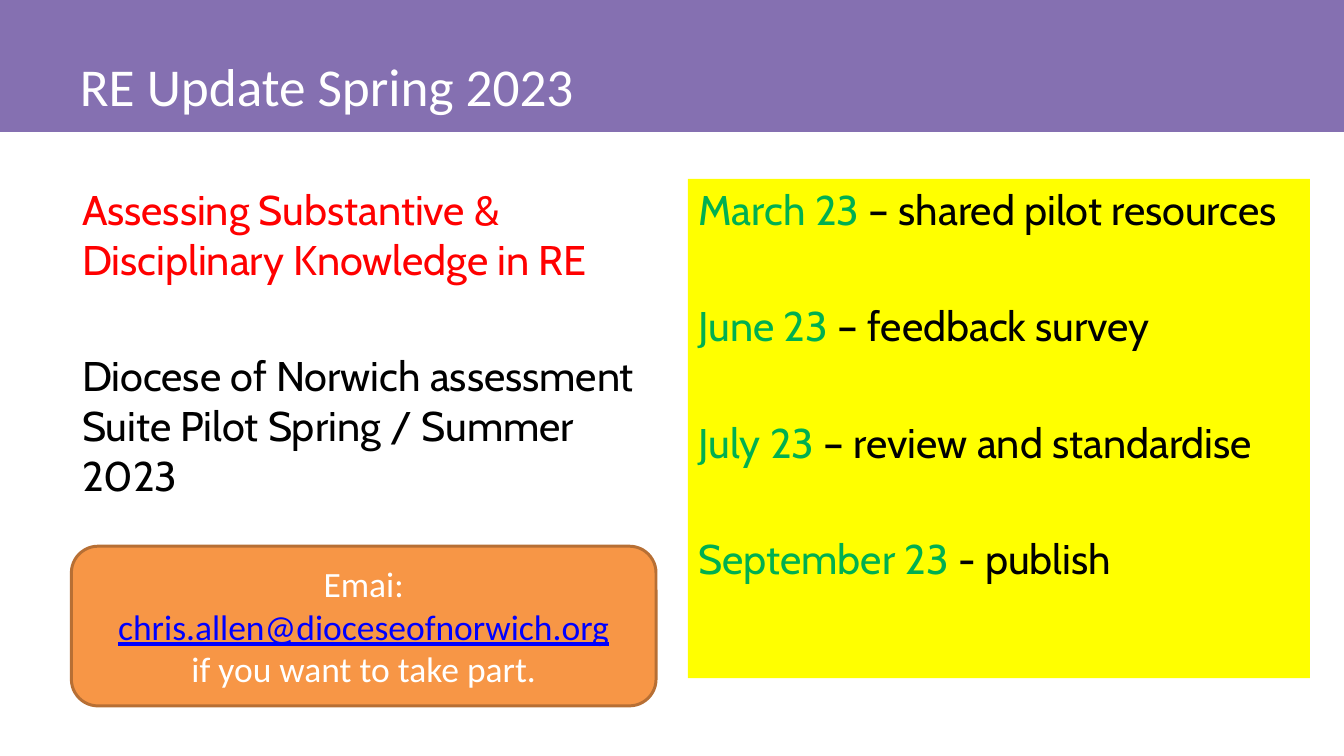
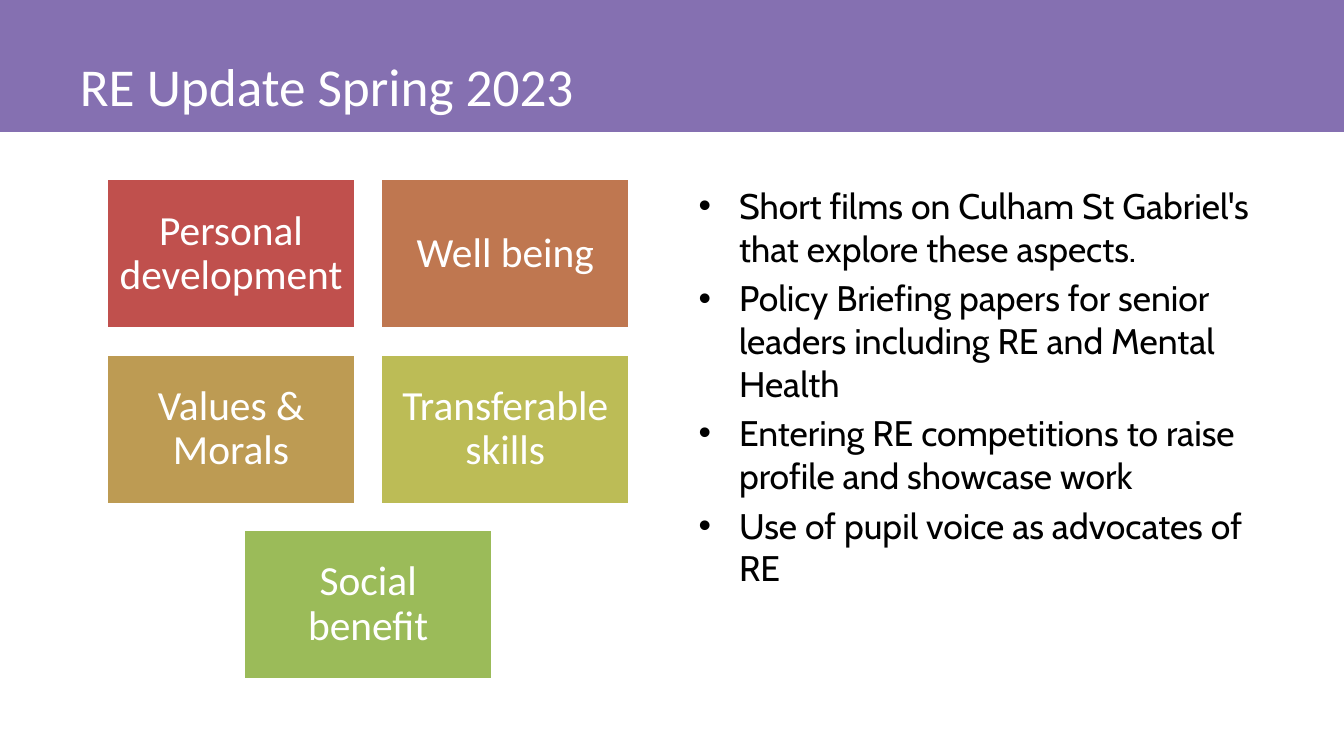
from dataclasses import dataclass

from lxml import etree
from pptx import Presentation
from pptx import util as u
from pptx.dml.color import RGBColor
from pptx.enum import shapes, text
from pptx.oxml import ns

PURPLE, ORANGE, ORANGE_EDGE, YELLOW = "8570B1", "F79646", "B76F34", "FFFF00"
WHITE, BLACK, RED, GREEN, BLUE = "FFFFFF", "000000", "FF0000", "00B050", "0000FF"
TITLE_FONT, BODY_FONT = "Calibri", "Cabin"
WIDTH, HEIGHT = 12.62, 7.1
CONTENT_TOP, CONTENT_HEIGHT = 1.68, 4.69
LEFT_COLUMN, RIGHT_COLUMN, COLUMN_WIDTH = 0.67, 6.46, 5.58
TILE_WIDTH, TILE_HEIGHT, TILE_GAP, TILE_LEFT, TILES_PER_ROW = 2.34, 1.41, 0.235, 1, 2


@dataclass(frozen=True)
class Box:
    left: float
    top: float
    width: float
    height: float


@dataclass(frozen=True)
class Words:
    text: str
    color: str
    underline: bool = False


@dataclass(frozen=True)
class Tile:
    label: str
    color: str


MILESTONES = [
    [Words("March 23 ", GREEN), Words("– shared pilot resources", BLACK)],
    [Words("June 23 ", GREEN), Words("– feedback survey", BLACK)],
    [Words("July 23 ", GREEN), Words("– review and standardise", BLACK)],
    [Words("September 23 ", GREEN), Words("- publish", BLACK)],
]
PILOT = [
    [Words("Assessing Substantive & Disciplinary Knowledge in RE", RED)],
    [Words("Diocese of Norwich assessment Suite Pilot Spring / Summer 2023", BLACK)],
]
CONTACT = [
    [Words("Emai: ", WHITE), Words("chris.allen@dioceseofnorwich.org", BLUE, True)],
    [Words("if you want to take part.", WHITE)],
]
ACTIONS = [
    [Words("Short films on Culham St Gabriel's that explore these aspects.", BLACK)],
    [Words("Policy Briefing papers for senior leaders including RE and Mental Health", BLACK)],
    [Words("Entering RE competitions to raise profile and showcase work", BLACK)],
    [Words("Use of pupil voice as advocates of RE", BLACK)],
]
TILES = [
    Tile("Personal development", "C0504D"),
    Tile("Well being", "BF7750"),
    Tile("Values & Morals", "BD9B53"),
    Tile("Transferable skills", "BCBC56"),
    Tile("Social benefit", "9BBB59"),
]


def rgb(color: str) -> RGBColor:
    return RGBColor.from_string(color)


def place(shape, box: Box) -> None:
    shape.left, shape.top = u.Inches(box.left), u.Inches(box.top)
    shape.width, shape.height = u.Inches(box.width), u.Inches(box.height)


def fill_shape(shape, color: str) -> None:
    shape.fill.solid()
    shape.fill.fore_color.rgb = rgb(color)


def add_box(slide, kind, box: Box, fill: str, line: str | None = None):
    shape = slide.shapes.add_shape(kind, 0, 0, 0, 0)
    place(shape, box)
    shape.shadow.inherit = False
    fill_shape(shape, fill)
    if line:
        shape.line.color.rgb = rgb(line)
        shape.line.width = u.Pt(2)
    else:
        shape.line.fill.background()
    return shape


def set_bullet(paragraph, bulleted: bool) -> None:
    properties = paragraph._p.get_or_add_pPr()
    indent = u.Inches(0.38) if bulleted else 0
    properties.set("marL", str(indent))
    properties.set("indent", str(-indent))
    bullet = etree.SubElement(properties, ns.qn("a:buChar" if bulleted else "a:buNone"))
    if bulleted:
        bullet.set("char", "•")


def write(shape, lines: list[list[Words]], font: str, size: float, gap: float = 0,
          align=text.PP_ALIGN.LEFT, anchor=text.MSO_ANCHOR.TOP,
          bulleted: bool = False, line_spacing: float = 1.0) -> None:
    frame = shape.text_frame
    frame.word_wrap = True
    frame.auto_size = text.MSO_AUTO_SIZE.NONE
    frame.vertical_anchor = anchor
    for index, line in enumerate(lines):
        paragraph = frame.add_paragraph() if index else frame.paragraphs[0]
        set_bullet(paragraph, bulleted)
        paragraph.alignment = align
        paragraph.line_spacing = line_spacing
        paragraph.space_before = u.Pt(gap if index else 0)
        for words in line:
            run = paragraph.add_run()
            run.text = words.text
            run.font.name = font
            run.font.size = u.Pt(size)
            run.font.color.rgb = rgb(words.color)
            if words.underline:
                run.font.underline = True


def add_titled_slide(presentation, layout_name: str):
    slide = presentation.slides.add_slide(presentation.slide_layouts.get_by_name(layout_name))
    title = slide.shapes.title
    place(title, Box(0.65, 0.28, 9.29, 0.87))
    write(title, [[Words("RE Update Spring 2023", WHITE)]], TITLE_FONT, 36,
          anchor=text.MSO_ANCHOR.BOTTOM)
    return slide


def add_master_band(presentation, slide) -> None:
    band = add_box(slide, shapes.MSO_SHAPE.RECTANGLE, Box(0, 0, WIDTH, 1.24), PURPLE)
    presentation.slide_master.shapes.element.insert(2, band.element)


def build_pilot_slide(presentation):
    slide = add_titled_slide(presentation, "Two Content")
    pilot, milestones = slide.placeholders[1], slide.placeholders[2]
    place(pilot, Box(LEFT_COLUMN, CONTENT_TOP, COLUMN_WIDTH, CONTENT_HEIGHT))
    write(pilot, PILOT, BODY_FONT, 28, gap=45)
    place(milestones, Box(RIGHT_COLUMN, CONTENT_TOP, 5.84, CONTENT_HEIGHT))
    fill_shape(milestones, YELLOW)
    write(milestones, MILESTONES, BODY_FONT, 28, gap=45)
    contact = add_box(slide, shapes.MSO_SHAPE.ROUNDED_RECTANGLE,
                      Box(LEFT_COLUMN, 5.13, 5.49, 1.5), ORANGE, ORANGE_EDGE)
    write(contact, CONTACT, TITLE_FONT, 24, align=text.PP_ALIGN.CENTER,
          anchor=text.MSO_ANCHOR.MIDDLE)
    return slide


def add_tiles(slide) -> None:
    step_x, step_y = TILE_WIDTH + TILE_GAP, TILE_HEIGHT + TILE_GAP
    for index, tile in enumerate(TILES):
        row, column = divmod(index, TILES_PER_ROW)
        row_count = min(TILES_PER_ROW, len(TILES) - row * TILES_PER_ROW)
        left = TILE_LEFT + (column + (TILES_PER_ROW - row_count) / 2) * step_x
        box = Box(left, CONTENT_TOP + row * step_y, TILE_WIDTH, TILE_HEIGHT)
        shape = add_box(slide, shapes.MSO_SHAPE.RECTANGLE, box, tile.color, WHITE)
        frame = shape.text_frame
        frame.margin_left = frame.margin_right = u.Inches(0.12)
        frame.margin_top = frame.margin_bottom = u.Inches(0.12)
        write(shape, [[Words(tile.label, WHITE)]], TITLE_FONT, 28,
              align=text.PP_ALIGN.CENTER, anchor=text.MSO_ANCHOR.MIDDLE, line_spacing=0.9)


def build_benefits_slide(presentation) -> None:
    slide = add_titled_slide(presentation, "Title and Content")
    add_tiles(slide)
    actions = slide.placeholders[1]
    place(actions, Box(RIGHT_COLUMN, CONTENT_TOP, COLUMN_WIDTH, CONTENT_HEIGHT))
    write(actions, ACTIONS, BODY_FONT, 24, gap=4.8, bulleted=True)


def main() -> None:
    presentation = Presentation()
    presentation.slide_width = u.Inches(WIDTH)
    presentation.slide_height = u.Inches(HEIGHT)
    add_master_band(presentation, build_pilot_slide(presentation))
    build_benefits_slide(presentation)
    presentation.save("out.pptx")


if __name__ == "__main__":
    main()
